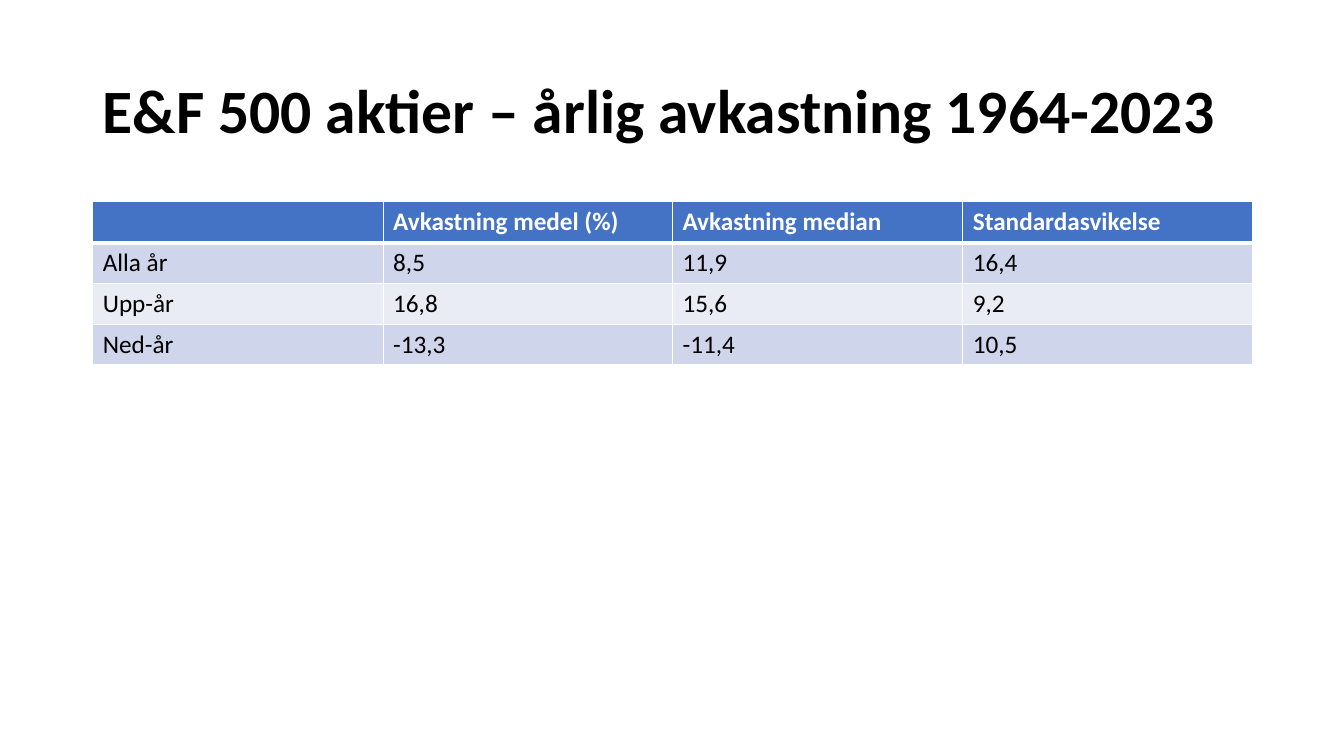
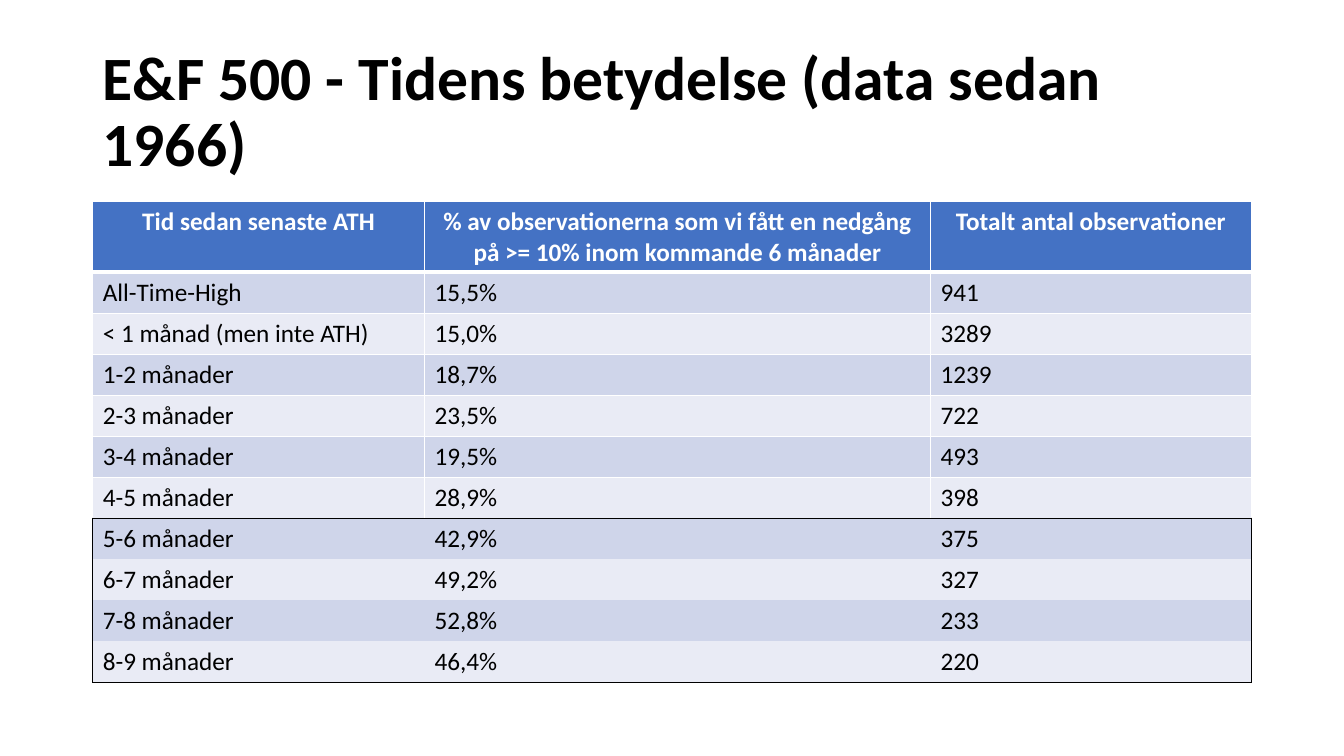
from dataclasses import dataclass

from lxml import etree
from pptx import Presentation
from pptx.dml.color import RGBColor
from pptx.enum.text import MSO_ANCHOR, PP_ALIGN
from pptx.oxml.ns import qn
from pptx.util import Pt

LEFT, CENTER = PP_ALIGN.LEFT, PP_ALIGN.CENTER
MIDDLE = MSO_ANCHOR.MIDDLE
EMU_PER_PX = 9144
BLANK_LAYOUT = 6


@dataclass(frozen=True)
class Theme:
    font: str = "Calibri"
    title_size: int = 44
    table_size: int = 18
    ink: str = "000000"
    paper: str = "FFFFFF"
    header: str = "4472C4"
    bands: tuple = ("CFD5EA", "E9EBF5")
    thin: int = 1
    thick: int = 3


THEME = Theme()
SLIDE_SIZE = (1333, 750)
TITLE_BOX = (92, 40, 1150, 145)
TABLE_LEFT, TABLE_TOP = 92, 200

SLIDES = [
    {
        "title": "E&F 500 aktier – årlig avkastning 1964-2023",
        "columns": (288, 287, 288, 287),
        "table_height": 162,
        "header_height": 41,
        "header_align": LEFT,
        "boxed_rows": 0,
        "rows": [
            ("", "Avkastning medel (%)", "Avkastning median", "Standardasvikelse"),
            ("Alla år", "8,5", "11,9", "16,4"),
            ("Upp-år", "16,8", "15,6", "9,2"),
            ("Ned-år", "-13,3", "-11,4", "10,5"),
        ],
    },
    {
        "title": "E&F 500 - Tidens betydelse (data sedan 1966)",
        "columns": (329, 502, 318),
        "table_height": 476,
        "header_height": 69,
        "header_align": CENTER,
        "boxed_rows": 4,
        "rows": [
            (
                "Tid sedan senaste ATH",
                "% av observationerna som vi fått en nedgång på >= 10% inom kommande 6 månader",
                "Totalt antal observationer",
            ),
            ("All-Time-High", "15,5%", "941"),
            ("< 1 månad (men inte ATH)", "15,0%", "3289"),
            ("1-2 månader", "18,7%", "1239"),
            ("2-3 månader", "23,5%", "722"),
            ("3-4 månader", "19,5%", "493"),
            ("4-5 månader", "28,9%", "398"),
            ("5-6 månader", "42,9%", "375"),
            ("6-7 månader", "49,2%", "327"),
            ("7-8 månader", "52,8%", "233"),
            ("8-9 månader", "46,4%", "220"),
        ],
    },
]


def px(length):
    return round(length * EMU_PER_PX)


def write(frame, text, *, size, color, bold=False, align=LEFT, line_spacing=None):
    frame.word_wrap = True
    paragraph = frame.paragraphs[0]
    paragraph.alignment = align
    paragraph.line_spacing = line_spacing
    if not text:
        paragraph.font.size = Pt(size)
        return
    run = paragraph.add_run()
    run.text = text
    run.font.name = THEME.font
    run.font.size = Pt(size)
    run.font.bold = bold
    run.font.color.rgb = RGBColor.from_string(color)


def set_borders(cell, borders):
    properties = cell._tc.get_or_add_tcPr()
    for position, side in enumerate("LRTB"):
        line = etree.Element(qn(f"a:ln{side}"))
        if borders[side]:
            color, width = borders[side]
            line.set("w", str(Pt(width)))
            fill = etree.SubElement(line, qn("a:solidFill"))
            etree.SubElement(fill, qn("a:srgbClr"), val=color)
        else:
            line.set("w", "0")
            etree.SubElement(line, qn("a:noFill"))
        properties.insert(position, line)


def borders_for(row, column, row_count, column_count, boxed_rows):
    white = (THEME.paper, THEME.thin)
    black = (THEME.ink, THEME.thin)
    heavy = (THEME.paper, THEME.thick)
    box_start = row_count - boxed_rows
    if row >= box_start:
        return {
            "L": black if column == 0 else None,
            "R": black if column == column_count - 1 else None,
            "T": black if row == box_start else None,
            "B": black if row == row_count - 1 else None,
        }
    borders = dict.fromkeys("LRTB", white)
    if row == 0:
        borders["B"] = heavy
    elif row == 1:
        borders["T"] = heavy
    if boxed_rows and row == box_start - 1:
        borders["B"] = black
    return borders


def add_title(slide, title):
    frame = slide.shapes.add_textbox(*map(px, TITLE_BOX)).text_frame
    frame.vertical_anchor = MIDDLE
    write(frame, title, size=THEME.title_size, color=THEME.ink, bold=True, line_spacing=0.9)


def add_data_table(slide, content):
    rows, columns = content["rows"], content["columns"]
    table = slide.shapes.add_table(
        len(rows), len(columns), px(TABLE_LEFT), px(TABLE_TOP),
        px(sum(columns)), px(content["table_height"]),
    ).table
    table.first_row = table.horz_banding = False
    for column, width in zip(table.columns, columns):
        column.width = px(width)
    header_height = content["header_height"]
    body_height = (content["table_height"] - header_height) / (len(rows) - 1)

    for r, values in enumerate(rows):
        is_header = r == 0
        table.rows[r].height = px(header_height if is_header else body_height)
        fill = THEME.header if is_header else THEME.bands[(r - 1) % 2]
        for c, value in enumerate(values):
            cell = table.cell(r, c)
            cell.fill.solid()
            cell.fill.fore_color.rgb = RGBColor.from_string(fill)
            write(
                cell.text_frame, value, size=THEME.table_size,
                color=THEME.paper if is_header else THEME.ink, bold=is_header,
                align=content["header_align"] if is_header else LEFT,
            )
            set_borders(cell, borders_for(r, c, len(rows), len(columns), content["boxed_rows"]))


def main():
    deck = Presentation()
    deck.slide_width, deck.slide_height = map(px, SLIDE_SIZE)
    for content in SLIDES:
        slide = deck.slides.add_slide(deck.slide_layouts[BLANK_LAYOUT])
        add_title(slide, content["title"])
        add_data_table(slide, content)
    deck.save("out.pptx")


if __name__ == "__main__":
    main()
